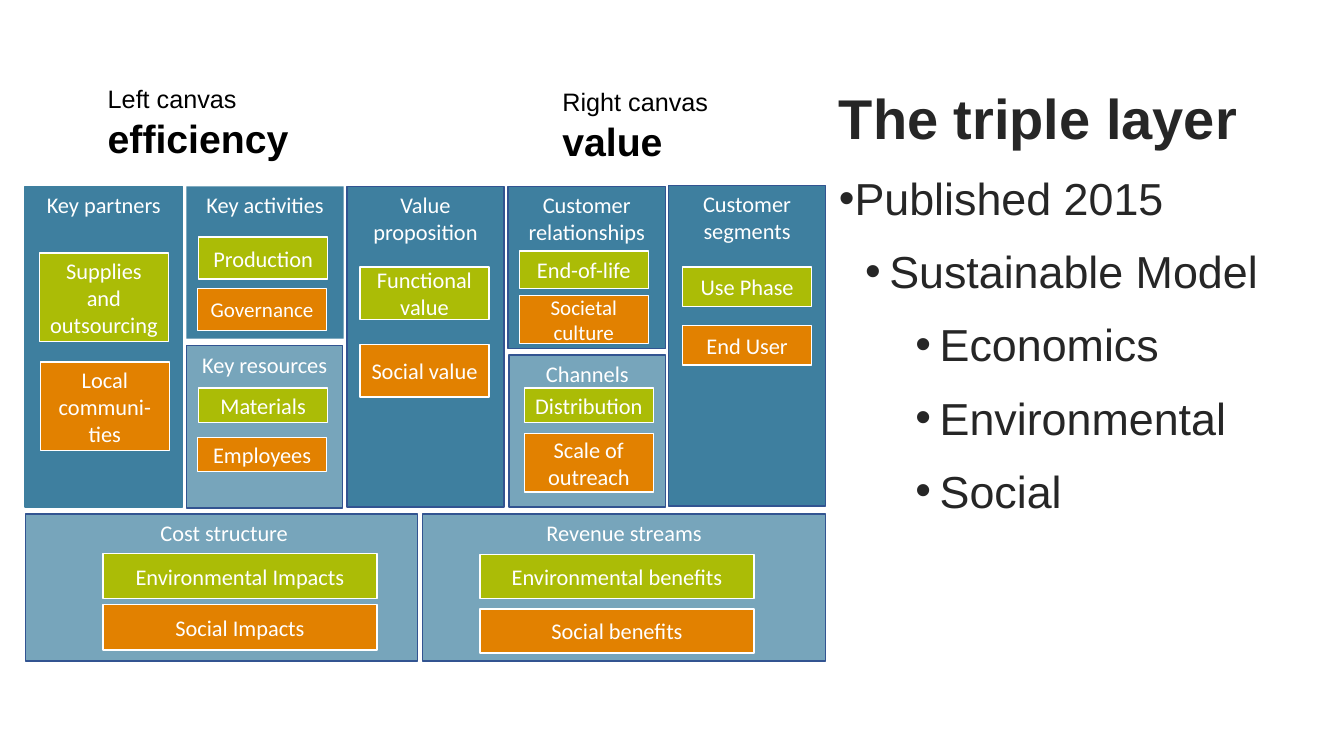
from dataclasses import dataclass

from lxml import etree
from pptx import Presentation
from pptx.dml import color
from pptx.enum import shapes, text
from pptx.oxml import ns
from pptx.shapes import autoshape
from pptx.slide import Slide
from pptx.util import Inches, Pt


@dataclass(frozen=True)
class Theme:
    panel: str = "3E7F9F"
    panel_border: str = "325491"
    environmental: str = "ABBC06"
    social: str = "E28100"
    white: str = "FFFFFF"
    black: str = "000000"
    outline_text: str = "262626"
    canvas_font: str = "Calibri"
    heading_font: str = "Arial"
    body: float = 16
    small: float = 15
    caption: float = 18
    emphasis: float = 28
    title: float = 40
    bullet: float = 32


THEME = Theme()


@dataclass(frozen=True)
class Tag:
    label: str
    left: float
    top: float
    height: float
    size: float = THEME.body


@dataclass(frozen=True)
class Panel:
    title: str
    left: float
    top: float
    width: float
    height: float
    environmental: Tag
    social: Tag
    tag_width: float = 1.28
    border: str | None = THEME.panel_border
    opacity: int = 100
    right_inset: float = 0.1


@dataclass(frozen=True)
class Caption:
    side: str
    aim: str
    left: float
    top: float
    width: float


COLUMN = 1.56
PANELS = [
    Panel("Key partners", 0.25, 1.85, COLUMN, 3.18,
          Tag("Supplies and outsourcing", 0.39, 2.51, 0.88),
          Tag("Local communi-ties", 0.4, 3.59, 0.88), border=THEME.panel),
    Panel("Key activities", 1.85, 1.85, COLUMN, 1.51,
          Tag("Production", 1.97, 2.35, 0.42),
          Tag("Governance", 1.96, 2.86, 0.42, THEME.small), border=None),
    Panel("Value proposition", 3.44, 1.85, COLUMN, 3.18,
          Tag("Functional value", 3.57, 2.65, 0.52),
          Tag("Social value", 3.57, 3.42, 0.52)),
    Panel("Customer segments", 6.63, 1.84, COLUMN, 3.18,
          Tag("Use Phase", 6.77, 2.65, 0.39),
          Tag("End User", 6.77, 3.23, 0.39)),
    Panel("Cost structure", 0.25, 5.1, 3.89, 1.46,
          Tag("Environmental Impacts", 1.02, 5.49, 0.45),
          Tag("Social Impacts", 1.02, 6, 0.45),
          tag_width=2.72, opacity=70, right_inset=0.04),
    Panel("Revenue streams", 4.19, 5.1, 4, 1.46,
          Tag("Environmental benefits", 4.76, 5.5, 0.44),
          Tag("Social benefits", 4.76, 6.04, 0.44),
          tag_width=2.72, opacity=70),
    Panel("Key resources", 1.85, 3.43, 1.55, 1.61,
          Tag("Materials", 1.97, 3.85, 0.34),
          Tag("Employees", 1.96, 4.34, 0.34), opacity=70),
    Panel("Channels", 5.05, 3.52, 1.55, 1.51,
          Tag("Distribution", 5.2, 3.85, 0.34),
          Tag("Scale of outreach", 5.2, 4.3, 0.58), opacity=70),
    Panel("Customer relationships", 5.04, 1.85, COLUMN, 1.61,
          Tag("End-of-life", 5.15, 2.49, 0.37),
          Tag("Societal culture", 5.15, 2.93, 0.48, THEME.small)),
]
CAPTIONS = [
    Caption("Left canvas", "efficiency", 0.97, 0.78, 2.02),
    Caption("Right canvas", "value", 5.48, 0.81, 1.8),
]
OUTLINE = [
    ("Published 2015", 0),
    ("Sustainable Model", 1),
    ("Economics", 2),
    ("Environmental", 2),
    ("Social", 2),
]


def rgb(code: str) -> color.RGBColor:
    return color.RGBColor.from_string(code)


def set_font(paragraph, name: str, size: float, code: str, bold: bool = False) -> None:
    font = paragraph.font
    font.name, font.size, font.bold = name, Pt(size), bold
    font.color.rgb = rgb(code)


def add_block(slide: Slide, label: str, left: float, top: float, width: float,
              height: float, fill: str, border: str | None, size: float,
              anchor: text.MSO_ANCHOR) -> autoshape.Shape:
    block = slide.shapes.add_shape(
        shapes.MSO_SHAPE.RECTANGLE,
        Inches(left), Inches(top), Inches(width), Inches(height))
    block.shadow.inherit = False
    block.fill.solid()
    block.fill.fore_color.rgb = rgb(fill)
    if border:
        block.line.color.rgb = rgb(border)
        block.line.width = Pt(1)
    else:
        block.line.fill.background()
    frame = block.text_frame
    frame.word_wrap = True
    frame.vertical_anchor = anchor
    paragraph = frame.paragraphs[0]
    paragraph.text = label
    paragraph.alignment = text.PP_ALIGN.CENTER
    set_font(paragraph, THEME.canvas_font, size, THEME.white)
    return block


def set_opacity(block: autoshape.Shape, percent: int) -> None:
    fill_color = block.fill._xPr.find(ns.qn("a:solidFill"))[0]
    etree.SubElement(fill_color, ns.qn("a:alpha"), val=str(percent * 1000))


def add_panel(slide: Slide, panel: Panel) -> None:
    """Draw a canvas area with its environmental and social tags."""
    block = add_block(slide, panel.title, panel.left, panel.top, panel.width,
                      panel.height, THEME.panel, panel.border, THEME.body,
                      text.MSO_ANCHOR.TOP)
    block.text_frame.margin_right = Inches(panel.right_inset)
    if panel.opacity < 100:
        set_opacity(block, panel.opacity)
    for tag, fill in ((panel.environmental, THEME.environmental),
                      (panel.social, THEME.social)):
        add_block(slide, tag.label, tag.left, tag.top, panel.tag_width, tag.height,
                  fill, THEME.white, tag.size, text.MSO_ANCHOR.MIDDLE)


def add_caption(slide: Slide, caption: Caption) -> None:
    frame = slide.shapes.add_textbox(
        Inches(caption.left), Inches(caption.top),
        Inches(caption.width), Inches(0.88)).text_frame
    frame.word_wrap = False
    frame.auto_size = text.MSO_AUTO_SIZE.SHAPE_TO_FIT_TEXT
    side, aim = frame.paragraphs[0], frame.add_paragraph()
    side.text, aim.text = caption.side, caption.aim
    set_font(side, THEME.heading_font, THEME.caption, THEME.black)
    set_font(aim, THEME.heading_font, THEME.emphasis, THEME.black, bold=True)


def add_bullet(paragraph, level: int) -> None:
    properties = paragraph._p.get_or_add_pPr()
    properties.set("marL", str(Inches(0.5 * level)))
    properties.set("indent", str(Inches(-0.24 if level else 0)))
    etree.SubElement(properties, ns.qn("a:buFont"), typeface=THEME.heading_font)
    etree.SubElement(properties, ns.qn("a:buChar"), char="•")


def add_outline(slide: Slide) -> None:
    frame = slide.shapes.add_textbox(
        Inches(8.19), Inches(0.73), Inches(5.27), Inches(4.34)).text_frame
    frame.word_wrap = True
    frame.auto_size = text.MSO_AUTO_SIZE.SHAPE_TO_FIT_TEXT
    frame.margin_left = frame.margin_right = Inches(0.13)
    frame.margin_top = frame.margin_bottom = Inches(0.07)
    title = frame.paragraphs[0]
    title.text = "The triple layer"
    title.line_spacing = 1.05
    set_font(title, THEME.heading_font, THEME.title, THEME.outline_text, bold=True)
    for label, level in OUTLINE:
        point = frame.add_paragraph()
        point.text, point.level = label, level
        point.line_spacing, point.space_before = 1.05, Pt(12)
        add_bullet(point, level)
        set_font(point, THEME.heading_font, THEME.bullet, THEME.outline_text)


def main() -> None:
    deck = Presentation()
    deck.slide_width, deck.slide_height = Inches(13.33), Inches(7.5)
    slide = deck.slides.add_slide(deck.slide_layouts[6])
    for panel in PANELS:
        add_panel(slide, panel)
    add_outline(slide)
    for caption in CAPTIONS:
        add_caption(slide, caption)
    deck.save("out.pptx")


if __name__ == "__main__":
    main()
